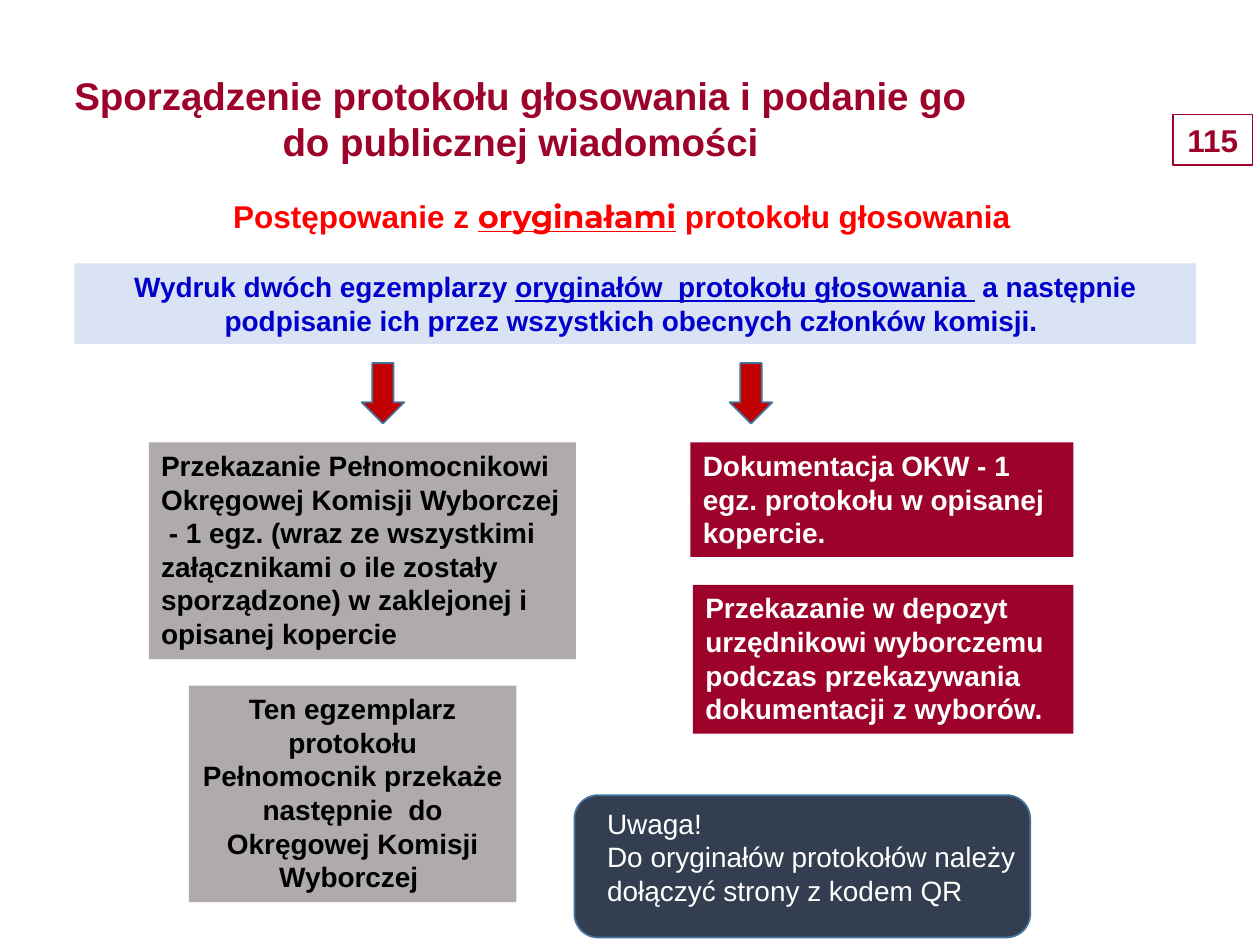
from pptx import Presentation
from pptx.dml.color import RGBColor
from pptx.enum.shapes import MSO_SHAPE
from pptx.enum.text import MSO_ANCHOR, MSO_AUTO_SIZE, PP_ALIGN
from pptx.util import Cm, Pt

CRIMSON, GREY, WHITE, BLACK = "9D032A", "AFABAB", "FFFFFF", "000000"
RED, ARROW_RED, BLUE, PALE_BLUE = "FF0000", "C00000", "0000CC", "DAE3F3"
NAVY, OUTLINE = "333F50", "43739E"


def rgb(value):
    return RGBColor.from_string(value)


class SlideBuilder:
    font = {"name": "Arial", "size": Pt(16), "bold": True}
    frame = {"word_wrap": True, "auto_size": MSO_AUTO_SIZE.SHAPE_TO_FIT_TEXT,
             "vertical_anchor": MSO_ANCHOR.TOP}

    def __init__(self, prs):
        self.s = prs.slides.add_slide(prs.slide_layouts[6])

    def shape(self, kind, box, fill=None, line=None, width=1):
        sp = self.s.shapes.add_shape(kind, *map(Cm, box))
        sp.shadow.inherit = False
        if fill:
            sp.fill.solid()
            sp.fill.fore_color.rgb = rgb(fill)
        else:
            sp.fill.background()
        if line:
            sp.line.color.rgb = rgb(line)
            sp.line.width = Pt(width)
        else:
            sp.line.fill.background()
        return sp

    def set_text(self, sp, paragraphs, color, align=PP_ALIGN.LEFT, **font):
        """Fill sp; a paragraph is a string or a list of (text, font changes)."""
        tf = sp.text_frame
        for name, value in self.frame.items():
            setattr(tf, name, value)
        for i, runs in enumerate(paragraphs):
            p = tf.add_paragraph() if i else tf.paragraphs[0]
            p.alignment = align
            for text, changes in [(runs, {})] if isinstance(runs, str) else runs:
                r = p.add_run()
                r.text = text
                r.font.color.rgb = rgb(color)
                for name, value in {**self.font, **font, **changes}.items():
                    setattr(r.font, name, value)

    def text(self, box, paragraphs, color, **style):
        self.set_text(self.s.shapes.add_textbox(*map(Cm, box)), paragraphs, color, **style)

    def panel(self, box, paragraphs, color, fill=None, line=None, width=1, **style):
        sp = self.shape(MSO_SHAPE.RECTANGLE, box, fill, line, width)
        self.set_text(sp, paragraphs, color, **style)


def main():
    prs = Presentation()
    prs.slide_width, prs.slide_height = Cm(25.4), Cm(19.05)
    s = SlideBuilder(prs)
    center = PP_ALIGN.CENTER

    s.panel((23.65, 2.31, 1.6, 1.02), ["115"], CRIMSON, line=CRIMSON, width=0.75,
            align=center, size=Pt(18))
    s.text((0.69, 1.32, 19.61, 2.13),
           ["Sporządzenie protokołu głosowania i podanie go do publicznej wiadomości"],
           CRIMSON, align=center, size=Pt(22))
    s.text((4.45, 3.84, 17.2, 1.02),
           [[("Postępowanie z ", {}),
             ("oryginałami", {"name": "Montserrat", "underline": True}),
             (" protokołu głosowania", {})]],
           RED, size=Pt(18))
    s.panel((1.5, 5.31, 22.61, 1.63),
            [[("Wydruk dwóch egzemplarzy ", {}),
              ("oryginałów  protokołu głosowania ", {"underline": True}),
              (" a następnie podpisanie ich przez wszystkich obecnych członków komisji. ", {})]],
            BLUE, PALE_BLUE, align=center)

    for left in (7.29, 14.71):
        s.shape(MSO_SHAPE.DOWN_ARROW, (left, 7.32, 0.86, 1.22), ARROW_RED, OUTLINE)

    s.panel((3, 8.92, 8.61, 4.37),
            ["Przekazanie Pełnomocnikowi Okręgowej Komisji Wyborczej",
             " - 1 egz. (wraz ze wszystkimi załącznikami o ile zostały "
             "sporządzone) w zaklejonej i opisanej kopercie"],
            BLACK, GREY)
    s.panel((3.81, 13.82, 6.6, 4.37),
            ["Ten egzemplarz protokołu Pełnomocnik przekaże następnie  do "
             "Okręgowej Komisji Wyborczej "],
            BLACK, GREY, align=center)
    s.panel((13.92, 8.92, 7.72, 2.31),
            ["Dokumentacja OKW - 1 egz. protokołu w opisanej kopercie."],
            WHITE, CRIMSON)
    s.panel((13.97, 11.79, 7.67, 3),
            ["Przekazanie w depozyt urzędnikowi wyborczemu",
             "podczas przekazywania dokumentacji z wyborów."],
            WHITE, CRIMSON)

    s.shape(MSO_SHAPE.ROUNDED_RECTANGLE, (11.58, 16.03, 9.19, 2.87), NAVY, OUTLINE)
    s.text((11.99, 16.13, 9.19, 2.31),
           ["Uwaga!", "Do oryginałów protokołów należy dołączyć strony z kodem QR"],
           WHITE, bold=False)

    prs.save("out.pptx")


if __name__ == "__main__":
    main()
